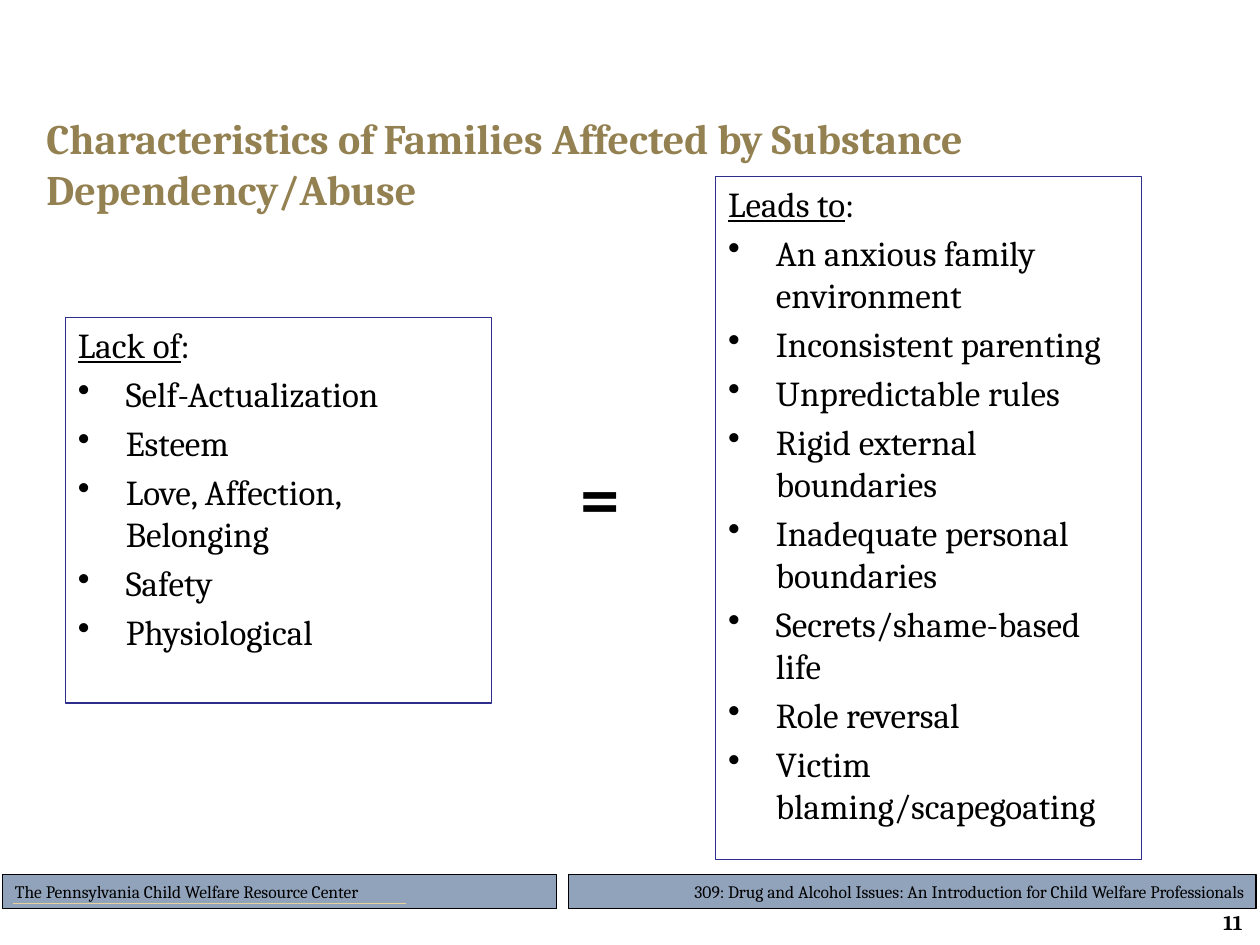
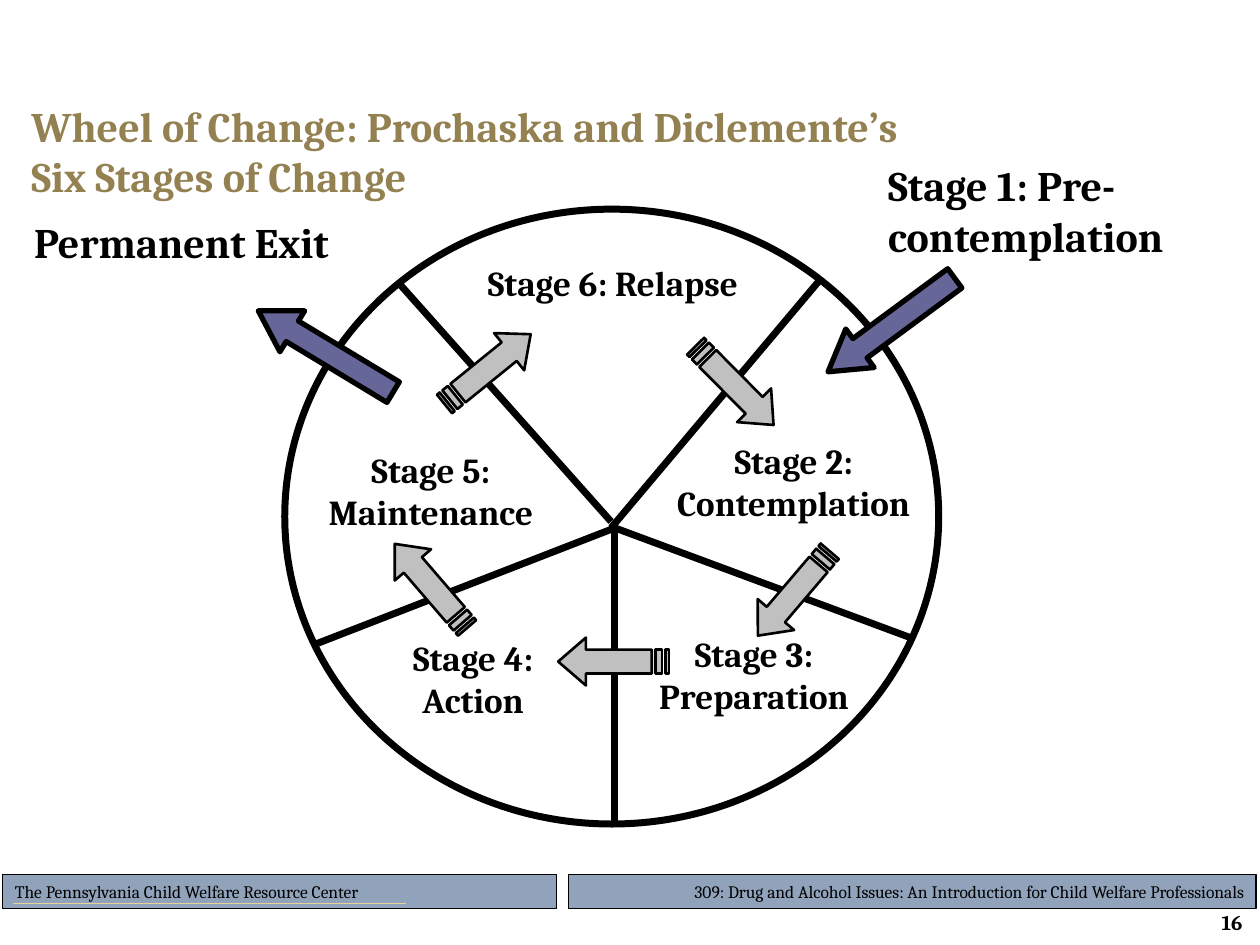
from dataclasses import dataclass
from typing import NamedTuple

from lxml.etree import SubElement
from pptx import Presentation
from pptx.dml.color import RGBColor
from pptx.enum.shapes import MSO_CONNECTOR, MSO_SHAPE
from pptx.enum.text import MSO_ANCHOR, PP_ALIGN
from pptx.oxml.ns import qn
from pptx.util import Inches, Pt

WIDE, HIGH = Inches(10), Inches(7.5)
COLS, ROWS = 100, 75

BLACK = RGBColor(0x00, 0x00, 0x00)
WHITE = RGBColor(0xFF, 0xFF, 0xFF)
GOLD = RGBColor(0x94, 0x81, 0x51)
SAND = RGBColor(0xE5, 0xD1, 0x99)
STEEL = RGBColor(0x91, 0xA3, 0xBB)
NAVY = RGBColor(0x2D, 0x2D, 0x8A)
PLUM = RGBColor(0x66, 0x66, 0x99)
GREY = RGBColor(0xC0, 0xC0, 0xC0)

FONT = "Cambria"
LEFT, MID, RIGHT = PP_ALIGN.LEFT, PP_ALIGN.CENTER, PP_ALIGN.RIGHT


class Area(NamedTuple):
    """A rectangle in grid columns and rows."""
    x: float
    y: float
    w: float
    h: float

    def place(self) -> tuple[int, int, int, int]:
        return col(self.x), row(self.y), col(self.w), row(self.h)


@dataclass(frozen=True)
class Label:
    text: str
    area: Area
    size: int = 20
    align: PP_ALIGN = MID
    bold: bool = True
    color: RGBColor = BLACK
    anchor: MSO_ANCHOR = MSO_ANCHOR.TOP


@dataclass(frozen=True)
class Panel:
    head: str
    items: tuple[str, ...]
    area: Area


class Turn(NamedTuple):
    """An arrow's top left corner and its rotation."""
    x: float
    y: float
    angle: float


class Spoke(NamedTuple):
    x1: float
    y1: float
    x2: float
    y2: float


BANDS = (
    (Label("309: Drug and Alcohol Issues: An Introduction for Child Welfare Professionals",
           Area(45.1, 69.4, 54.6, 2.7), 10, RIGHT, False), 0.75),
    (Label("The Pennsylvania Child Welfare Resource Center",
           Area(0.2, 69.4, 44, 2.7), 10, LEFT, False), 0.5),
)

PANELS = (
    Panel("Lack of",
          ("Self-Actualization", "Esteem", "Love, Affection, Belonging",
           "Safety", "Physiological"),
          Area(5.2, 25.2, 33.8, 30.6)),
    Panel("Leads to",
          ("An anxious family environment", "Inconsistent parenting",
           "Unpredictable rules", "Rigid external boundaries",
           "Inadequate personal boundaries", "Secrets/shame-based life",
           "Role reversal", "Victim blaming/scapegoating"),
          Area(56.8, 14, 33.8, 54.2)),
)

WHEEL = Area(22.6, 16.6, 51.9, 48.8)
SPOKES = (
    Spoke(31.5, 22.3, 48.5, 41.4),
    Spoke(65, 22.3, 48.5, 41.9),
    Spoke(48.8, 41.4, 48.8, 65.4),
    Spoke(48.8, 41.9, 72.5, 50.7),
    Spoke(48.8, 41.9, 25.1, 51.1),
)
STAGES = (
    Label("Stage 1: Pre-contemplation", Area(69.5, 12.2, 28.2, 9.1), 24, LEFT),
    Label("Permanent Exit", Area(0.3, 16.7, 28.2, 9.1), 24),
    Label("Stage 6: Relapse", Area(37.6, 20.3, 22.1, 7.7)),
    Label("Stage 2: Contemplation", Area(51.3, 34.4, 23.4, 7.7)),
    Label("Stage 5: Maintenance", Area(23.1, 35.1, 22.2, 7.7)),
    Label("Stage 4: Action", Area(27.5, 50, 20.1, 7.7)),
    Label("Stage 3: Preparation", Area(49.8, 49.7, 20.1, 7.7)),
)
GATES = (Turn(64.5, 23.9, 323.6), Turn(19.6, 26, 31.1))
STEPS = (
    Turn(53.9, 28.7, 45.3),
    Turn(58.6, 45.2, 130.4),
    Turn(44.3, 50.6, 180),
    Turn(29.8, 44.6, 229.3),
    Turn(34.3, 27.4, 321),
)
STEP_W, STEP_H = 8.8, 3.8
# Striped arrow pointing right: x in 32nds of its width, y in quarters of its height
BODY = ((24, 0), (24, 1), (5, 1), (5, 3), (24, 3), (24, 4), (32, 2))
STRIPES = ((0, 1), (2, 4))


def col(n: float) -> int:
    return round(WIDE * n / COLS)


def row(n: float) -> int:
    return round(HIGH * n / ROWS)


def style(run, size: int, bold: bool = False, color: RGBColor = BLACK) -> None:
    font = run.font
    font.name, font.size, font.bold = FONT, Pt(size), bold
    font.color.rgb = color


def paint(shape, fill: RGBColor, line: RGBColor, width: float) -> None:
    shape.shadow.inherit = False
    shape.fill.solid()
    shape.fill.fore_color.rgb = fill
    shape.line.color.rgb = line
    shape.line.width = Pt(width)


def write(shape, label: Label) -> None:
    frame = shape.text_frame
    frame.word_wrap = True
    frame.vertical_anchor = label.anchor
    frame.text = label.text
    for para in frame.paragraphs:
        para.alignment = label.align
        for run in para.runs:
            style(run, label.size, label.bold, label.color)


def add_label(slide, label: Label) -> None:
    write(slide.shapes.add_textbox(*label.area.place()), label)


def add_line(slide, ends: Spoke, color: RGBColor, width: float) -> None:
    line = slide.shapes.add_connector(
        MSO_CONNECTOR.STRAIGHT,
        col(ends.x1), row(ends.y1), col(ends.x2), row(ends.y2))
    line.line.color.rgb = color
    line.line.width = Pt(width)
    SubElement(line._element.spPr, qn("a:effectLst"))


def add_panel(slide, panel: Panel) -> None:
    box = slide.shapes.add_textbox(*panel.area.place())
    box.line.color.rgb = NAVY
    box.line.width = Pt(0.75)
    frame = box.text_frame
    frame.word_wrap = True
    head = frame.paragraphs[0]
    head.text = panel.head
    head.runs[0].font.underline = True
    head.add_run().text = ":"
    for item in panel.items:
        para = frame.add_paragraph()
        para.text = item
        props = para._p.get_or_add_pPr()
        props.set("marL", str(Inches(0.38)))
        props.set("indent", str(-Inches(0.38)))
        SubElement(props, qn("a:buChar")).set("char", "•")
        para.space_before = Pt(4)
    for para in frame.paragraphs:
        for run in para.runs:
            style(run, 20)


def add_step(slide, turn: Turn) -> None:
    """Draw a striped arrow, then rotate it about its centre."""
    bars = [((a, 1), (b, 1), (b, 3), (a, 3)) for a, b in STRIPES]
    build = None
    for part in (BODY, *bars):
        spots = [(col(turn.x + STEP_W * x / 32), row(turn.y + STEP_H * y / 4))
                 for x, y in part]
        if build is None:
            build = slide.shapes.build_freeform(*spots[0])
        else:
            build.move_to(*spots[0])
        build.add_line_segments(spots[1:], close=True)
    arrow = build.convert_to_shape()
    paint(arrow, GREY, BLACK, 1.5)
    arrow.rotation = turn.angle


def add_gate(slide, turn: Turn) -> None:
    """Draw a solid arrow into or out of the wheel."""
    arrow = slide.shapes.add_shape(
        MSO_SHAPE.LEFT_ARROW, *Area(turn.x, turn.y, 12.5, 3.8).place())
    arrow.adjustments[0], arrow.adjustments[1] = 0.5, 0.83
    paint(arrow, PLUM, BLACK, 3)
    arrow.rotation = turn.angle


def add_page(deck, title: str, x: float, y: float, number: int):
    """Add a slide with the shared bands, title and number."""
    slide = deck.slides.add_slide(deck.slide_layouts[6])
    for label, width in BANDS:
        band = slide.shapes.add_shape(MSO_SHAPE.RECTANGLE, *label.area.place())
        paint(band, STEEL, BLACK, width)
        write(band, label)
    add_line(slide, Spoke(1, 71.7, 32.2, 71.7), SAND, 0.75)
    add_label(slide, Label(title, Area(x, y, 93.7, 6.5), 24, LEFT,
                           color=GOLD, anchor=MSO_ANCHOR.MIDDLE))
    add_label(slide, Label(str(number), Area(88.5, 72.1, 11.1, 2.1), 12, RIGHT,
                           anchor=MSO_ANCHOR.MIDDLE))
    return slide


def add_traits(deck) -> None:
    slide = add_page(
        deck, "Characteristics of Families Affected by Substance Dependency/Abuse",
        2.7, 9.7, 11)
    for panel in PANELS:
        add_panel(slide, panel)
    add_label(slide, Label("=", Area(42.2, 35.4, 10.8, 7.7), 40))


def add_wheel(deck) -> None:
    slide = add_page(
        deck, "Wheel of Change: Prochaska and Diclemente’s\vSix Stages of Change",
        1.5, 8.7, 16)
    wheel = slide.shapes.add_shape(MSO_SHAPE.OVAL, *WHEEL.place())
    paint(wheel, WHITE, BLACK, 4)
    for spoke in SPOKES:
        add_line(slide, spoke, BLACK, 4)
    for stage in STAGES:
        add_label(slide, stage)
    for gate in GATES:
        add_gate(slide, gate)
    for step in STEPS:
        add_step(slide, step)


def main() -> None:
    deck = Presentation()
    deck.slide_width, deck.slide_height = WIDE, HIGH
    add_traits(deck)
    add_wheel(deck)
    deck.save("out.pptx")


if __name__ == "__main__":
    main()
